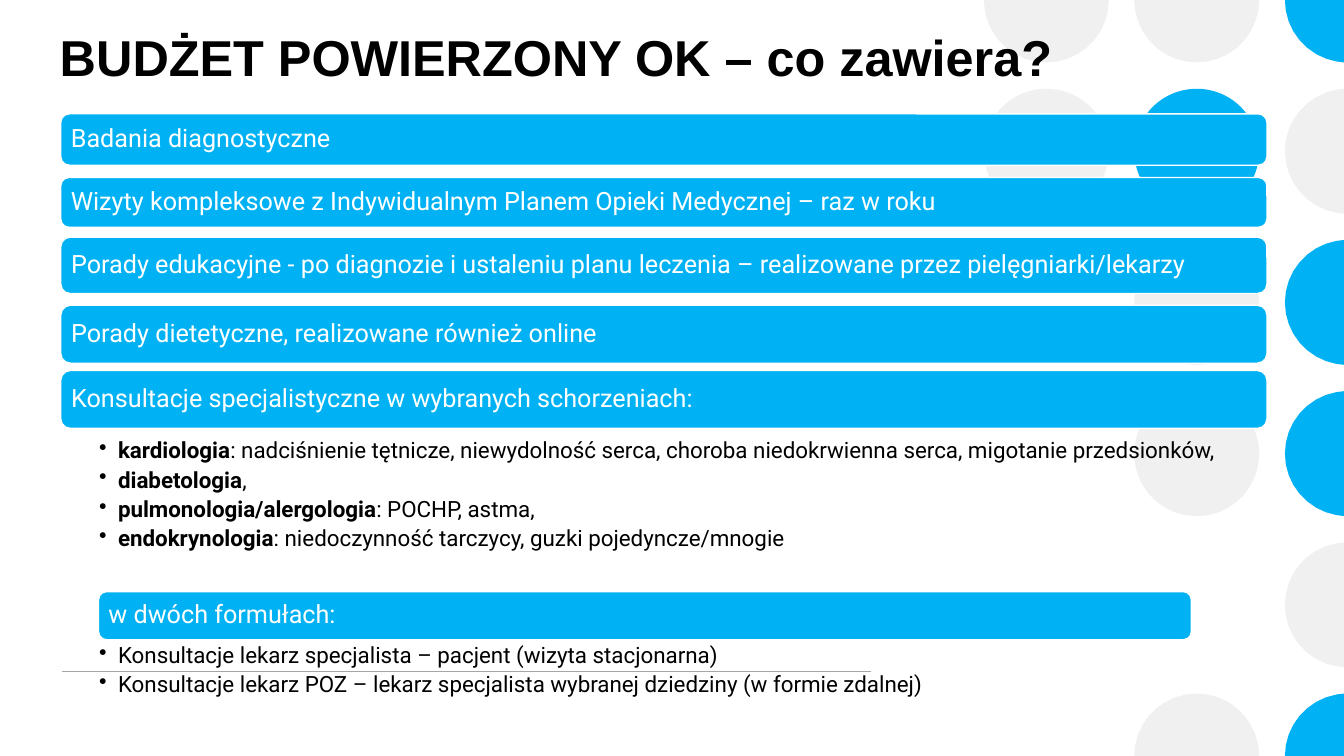
import math
from dataclasses import dataclass

import lxml.etree
import pptx
import pptx.dml.color
import pptx.enum.shapes
import pptx.enum.text
import pptx.oxml.ns
import pptx.util

Pt = pptx.util.Pt
SLIDE_WIDTH, SLIDE_HEIGHT = 960, 540
BLUE, GREY, WHITE, BLACK, RULE_GREY = "00B2F3", "EFF0EF", "FFFFFF", "000000", "A6A6A6"
DOT_RADIUS, DOT_PITCH = 44.6, 108
EDGE_TOLERANCE = 3
BULLET_INDENT = 13.5


@dataclass(frozen=True)
class DotColumn:
    center_x: float
    row_colors: dict[int, str]


@dataclass(frozen=True)
class Bar:
    text: str
    top: float
    height: float
    left: float = 43.4
    width: float = 861.6


@dataclass(frozen=True)
class Bullet:
    text: str
    lead: str = ""


@dataclass(frozen=True)
class BulletList:
    top: float
    height: float
    bullets: tuple[Bullet, ...]


DOT_COLUMNS = (
    DotColumn(747.4, {0: GREY, 1: GREY}),
    DotColumn(854.8, {0: GREY, 1: BLUE, 2: GREY, 3: GREY, 5: GREY}),
    DotColumn(962.4, {0: BLUE, 1: GREY, 2: BLUE, 3: BLUE, 4: GREY, 5: BLUE}),
)
BARS = (
    Bar("Badania diagnostyczne", 81.3, 36.7),
    Bar("Wizyty kompleksowe z Indywidualnym Planem Opieki Medycznej – raz w roku", 126.8, 35.6),
    Bar(
        "Porady edukacyjne - po diagnozie i ustaleniu planu leczenia – "
        "realizowane przez pielęgniarki/lekarzy",
        169.4,
        40.3,
    ),
    Bar("Porady dietetyczne, realizowane również online", 218, 41.4),
    Bar("Konsultacje specjalistyczne w wybranych schorzeniach:", 264.6, 41.4),
    Bar("w dwóch formułach:", 422.6, 34.4, 70.4, 780.6),
)
BULLET_LISTS = (
    BulletList(312.5, 105.8, (
        Bullet(
            ": nadciśnienie tętnicze, niewydolność serca, choroba niedokrwienna serca, "
            "migotanie przedsionków,",
            "kardiologia",
        ),
        Bullet(",", "diabetologia"),
        Bullet(": POCHP, astma,", "pulmonologia/alergologia"),
        Bullet(": niedoczynność tarczycy, guzki pojedyncze/mnogie", "endokrynologia"),
    )),
    BulletList(458.6, 67.7, (
        Bullet("Konsultacje lekarz specjalista – pacjent (wizyta stacjonarna)"),
        Bullet("Konsultacje lekarz POZ – lekarz specjalista wybranej dziedziny (w formie zdalnej)"),
    )),
)


def rgb(value: str) -> pptx.dml.color.RGBColor:
    return pptx.dml.color.RGBColor.from_string(value)


def add_run(paragraph, text: str, font: str, size: float, color: str, bold: bool = False) -> None:
    run = paragraph.add_run()
    run.text = text
    run.font.name = font
    run.font.size = Pt(size)
    run.font.bold = bold
    run.font.color.rgb = rgb(color)


def set_frame(frame, insets: tuple[float, float, float, float], middle: bool) -> None:
    frame.word_wrap = True
    frame.margin_left, frame.margin_top, frame.margin_right, frame.margin_bottom = map(Pt, insets)
    anchor = pptx.enum.text.MSO_ANCHOR
    frame.vertical_anchor = anchor.MIDDLE if middle else anchor.TOP


def set_paragraph(paragraph) -> None:
    paragraph.alignment = pptx.enum.text.PP_ALIGN.LEFT
    paragraph.line_spacing = 0.9


def clipped_outline(center_x: float, center_y: float) -> list[tuple[int, int]]:
    outline = []
    for degrees in range(0, 360, 10):
        x = center_x + DOT_RADIUS * math.cos(math.radians(degrees))
        y = center_y + DOT_RADIUS * math.sin(math.radians(degrees))
        edge_x, edge_y = min(x, SLIDE_WIDTH), min(max(y, 0), SLIDE_HEIGHT)
        beyond_side = x - edge_x > EDGE_TOLERANCE
        beyond_end = abs(y - edge_y) > EDGE_TOLERANCE
        if beyond_side == beyond_end:
            outline.append((Pt(edge_x), Pt(edge_y)))
    return list(dict.fromkeys(outline))


def add_dot(shapes, center_x: float, center_y: float, color: str) -> None:
    inside = (
        center_x + DOT_RADIUS <= SLIDE_WIDTH
        and DOT_RADIUS <= center_y <= SLIDE_HEIGHT - DOT_RADIUS
    )
    if inside:
        dot = shapes.add_shape(
            pptx.enum.shapes.MSO_SHAPE.OVAL,
            Pt(center_x - DOT_RADIUS), Pt(center_y - DOT_RADIUS),
            Pt(2 * DOT_RADIUS), Pt(2 * DOT_RADIUS),
        )
    else:
        outline = clipped_outline(center_x, center_y)
        builder = shapes.build_freeform(*outline[0])
        builder.add_line_segments(outline[1:], close=True)
        dot = builder.convert_to_shape()
    dot.shadow.inherit = False
    dot.fill.solid()
    dot.fill.fore_color.rgb = rgb(color)
    dot.line.fill.background()


def add_rule(shapes) -> None:
    rule = shapes.add_connector(
        pptx.enum.shapes.MSO_CONNECTOR.STRAIGHT, Pt(44.6), Pt(479.5), Pt(622), Pt(479.5)
    )
    rule.line.color.rgb = rgb(RULE_GREY)
    rule.line.width = Pt(1)
    lxml.etree.SubElement(rule._element.spPr, pptx.oxml.ns.qn("a:effectLst"))


def add_title(shapes) -> None:
    title = shapes.add_textbox(Pt(35.6), Pt(13.7), Pt(889), Pt(59))
    set_frame(title.text_frame, (7.2, 3.6, 7.2, 3.6), True)
    paragraph = title.text_frame.paragraphs[0]
    set_paragraph(paragraph)
    add_run(paragraph, "BUDŻET POWIERZONY OK – co zawiera?", "Arial", 36, BLACK, True)


def add_bar(shapes, bar: Bar) -> None:
    panel = shapes.add_shape(
        pptx.enum.shapes.MSO_SHAPE.ROUNDED_RECTANGLE,
        Pt(bar.left), Pt(bar.top), Pt(bar.width), Pt(bar.height),
    )
    panel.shadow.inherit = False
    panel.fill.solid()
    panel.fill.fore_color.rgb = rgb(BLUE)
    panel.line.color.rgb = rgb(WHITE)
    panel.line.width = Pt(1)
    set_frame(panel.text_frame, (5.4, 5.4, 5.4, 5.4), True)
    paragraph = panel.text_frame.paragraphs[0]
    set_paragraph(paragraph)
    add_run(paragraph, bar.text, "Roboto", 18, WHITE)


def add_bullet_list(shapes, items: BulletList) -> None:
    box = shapes.add_textbox(Pt(43.4), Pt(items.top), Pt(861.6), Pt(items.height))
    frame = box.text_frame
    set_frame(frame, (27.4, 1.6, 8.9, 1.6), False)
    for index, bullet in enumerate(items.bullets):
        paragraph = frame.add_paragraph() if index else frame.paragraphs[0]
        set_paragraph(paragraph)
        paragraph.level = 1
        paragraph.space_after = Pt(3.6)
        properties = paragraph._p.get_or_add_pPr()
        properties.set("marL", str(Pt(BULLET_INDENT)))
        properties.set("indent", str(-Pt(BULLET_INDENT)))
        lxml.etree.SubElement(properties, pptx.oxml.ns.qn("a:buChar"), char="•")
        if bullet.lead:
            add_run(paragraph, bullet.lead, "Roboto", 16, BLACK, True)
        add_run(paragraph, bullet.text, "Roboto", 16, BLACK)


def main() -> None:
    presentation = pptx.Presentation()
    presentation.slide_width = Pt(SLIDE_WIDTH)
    presentation.slide_height = Pt(SLIDE_HEIGHT)
    shapes = presentation.slides.add_slide(presentation.slide_layouts[6]).shapes
    for column in DOT_COLUMNS:
        for row, color in column.row_colors.items():
            add_dot(shapes, column.center_x, row * DOT_PITCH, color)
    add_rule(shapes)
    add_title(shapes)
    for bar in BARS:
        add_bar(shapes, bar)
    for items in BULLET_LISTS:
        add_bullet_list(shapes, items)
    presentation.save("out.pptx")


if __name__ == "__main__":
    main()
